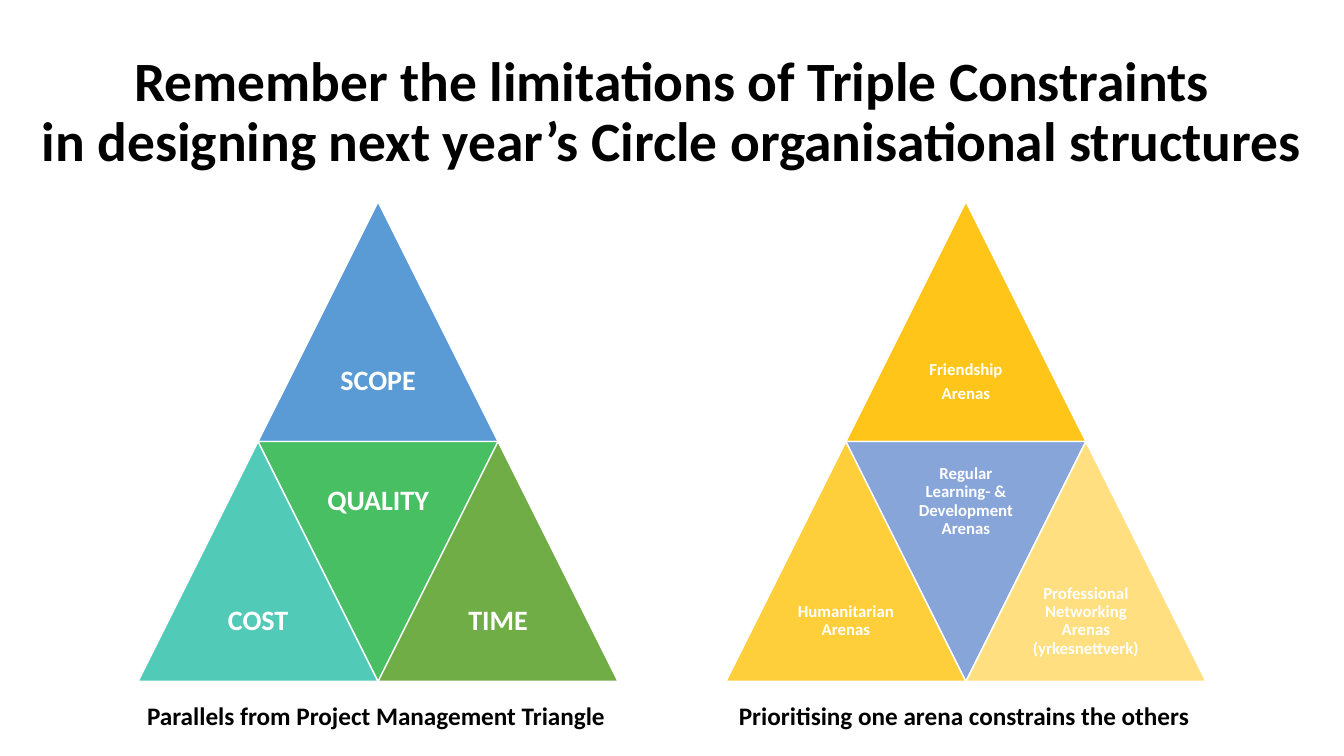
"""Build a slide that compares two triangles of triple constraints."""
from lxml import etree
from pptx import Presentation
from pptx.dml.color import RGBColor
from pptx.enum.shapes import MSO_SHAPE
from pptx.enum.text import MSO_ANCHOR, PP_ALIGN
from pptx.oxml.ns import qn
from pptx.util import Inches, Pt

TRIANGLE = MSO_SHAPE.ISOSCELES_TRIANGLE
MIDDLE, TOP = MSO_ANCHOR.MIDDLE, MSO_ANCHOR.TOP
CENTER, LEFT = PP_ALIGN.CENTER, PP_ALIGN.LEFT

WHITE, BLACK = "FFFFFF", "000000"
SIDE = 2.38
PYRAMID_TOP = 2
CAPTION_TOP = 6.9

TITLE = (
    "Remember the limitations of Triple Constraints\v"
    "in designing next year’s Circle organisational structures"
)
PYRAMIDS = [
    {
        "left": 7.2, "size": 12, "inset": 0.05,
        "parts": [
            ("Friendship\nArenas", "FFC000", 90),
            ("Humanitarian Arenas", "FFC000", 77),
            ("Regular Learning- & Development Arenas", "4472C4", 63),
            ("Professional Networking Arenas\v(yrkesnettverk)", "FFC000", 50),
        ],
    },
    {
        "left": 1.37, "size": 20, "inset": 0.08,
        "parts": [
            ("SCOPE", "5B9BD5", 100),
            ("COST", "52CAB8", 100),
            ("QUALITY", "49BF64", 100),
            ("TIME", "70AD47", 100),
        ],
    },
]
CAPTIONS = [
    ("Parallels from Project Management Triangle", 1.36, 4.78),
    ("Prioritising one arena constrains the others", 7.23, 4.7),
]
CELLS = [(0.5, 0, False), (0, 1, False), (0.5, 1, True), (1, 1, False)]


def set_color(color_format, hex_value):
    """Give a colour format an RGB value."""
    color_format.rgb = RGBColor.from_string(hex_value)


def apply(target, values):
    """Set each named attribute on the target."""
    for name, value in values.items():
        setattr(target, name, value)


def add_text(shapes, text, box, size, color=WHITE, frame_format=None, paragraph_format=None):
    """Add a bold Calibri text box."""
    frame = shapes.add_textbox(*map(Inches, box)).text_frame
    frame.text = text
    apply(frame, {"word_wrap": True, **(frame_format or {})})
    for paragraph in frame.paragraphs:
        apply(paragraph, paragraph_format or {})
        for run in paragraph.runs:
            apply(run.font, {"name": "Calibri", "size": Pt(size), "bold": True})
            set_color(run.font.color, color)


def add_triangle(shapes, left, top, color, opacity, inverted):
    """Add one white-edged triangle with the given opacity in percent."""
    triangle = shapes.add_shape(TRIANGLE, *map(Inches, (left, top, SIDE, SIDE)))
    triangle.shadow.inherit = False
    triangle.rotation = 180 if inverted else 0
    triangle.fill.solid()
    set_color(triangle.fill.fore_color, color)
    set_color(triangle.line.color, WHITE)
    triangle.line.width = Pt(1)
    if opacity < 100:
        fill_color = triangle.fill._xPr.find(qn("a:solidFill"))[0]
        etree.SubElement(fill_color, qn("a:alpha"), val=str(opacity * 1000))


def add_pyramid(slide, left, size, inset, parts):
    """Add four labelled triangles that form one large triangle."""
    shapes = slide.shapes.add_group_shape().shapes
    margins = ("margin_left", "margin_top", "margin_right", "margin_bottom")
    frame_format = {"vertical_anchor": MIDDLE, **dict.fromkeys(margins, Inches(inset))}
    paragraph_format = {
        "alignment": CENTER, "line_spacing": 0.9, "space_after": Pt(size * 0.35),
    }
    for (label, color, opacity), (column, row, inverted) in zip(parts, CELLS):
        x, y = left + column * SIDE, PYRAMID_TOP + row * SIDE
        add_triangle(shapes, x, y, color, opacity, inverted)
        label_top = y if inverted else y + SIDE / 2
        label_box = (x + SIDE / 4, label_top, SIDE / 2, SIDE / 2)
        add_text(shapes, label, label_box, size, WHITE, frame_format, paragraph_format)


def main():
    """Build and save the slide."""
    deck = Presentation()
    apply(deck, {"slide_width": Inches(13.33), "slide_height": Inches(7.5)})
    slide = deck.slides.add_slide(deck.slide_layouts[6])
    add_text(slide.shapes, TITLE, (0, 0.4, 13.33, 1.45), 39.6, BLACK,
             {"vertical_anchor": MIDDLE}, {"alignment": CENTER, "line_spacing": 0.9})
    for pyramid in PYRAMIDS:
        add_pyramid(slide, **pyramid)
    for caption, left, width in CAPTIONS:
        add_text(slide.shapes, caption, (left, CAPTION_TOP, width, 0.4), 18, BLACK,
                 {"word_wrap": False, "vertical_anchor": TOP}, {"alignment": LEFT})
    deck.save("out.pptx")


if __name__ == "__main__":
    main()
